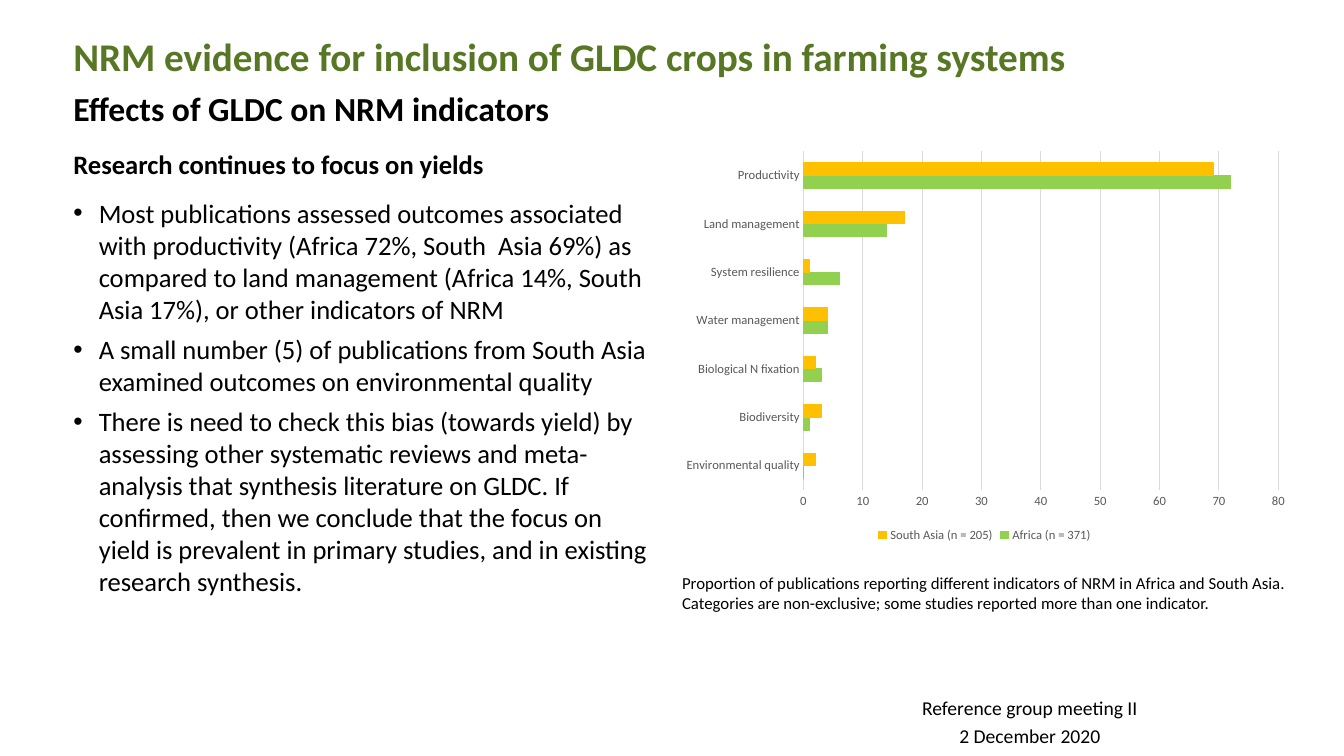
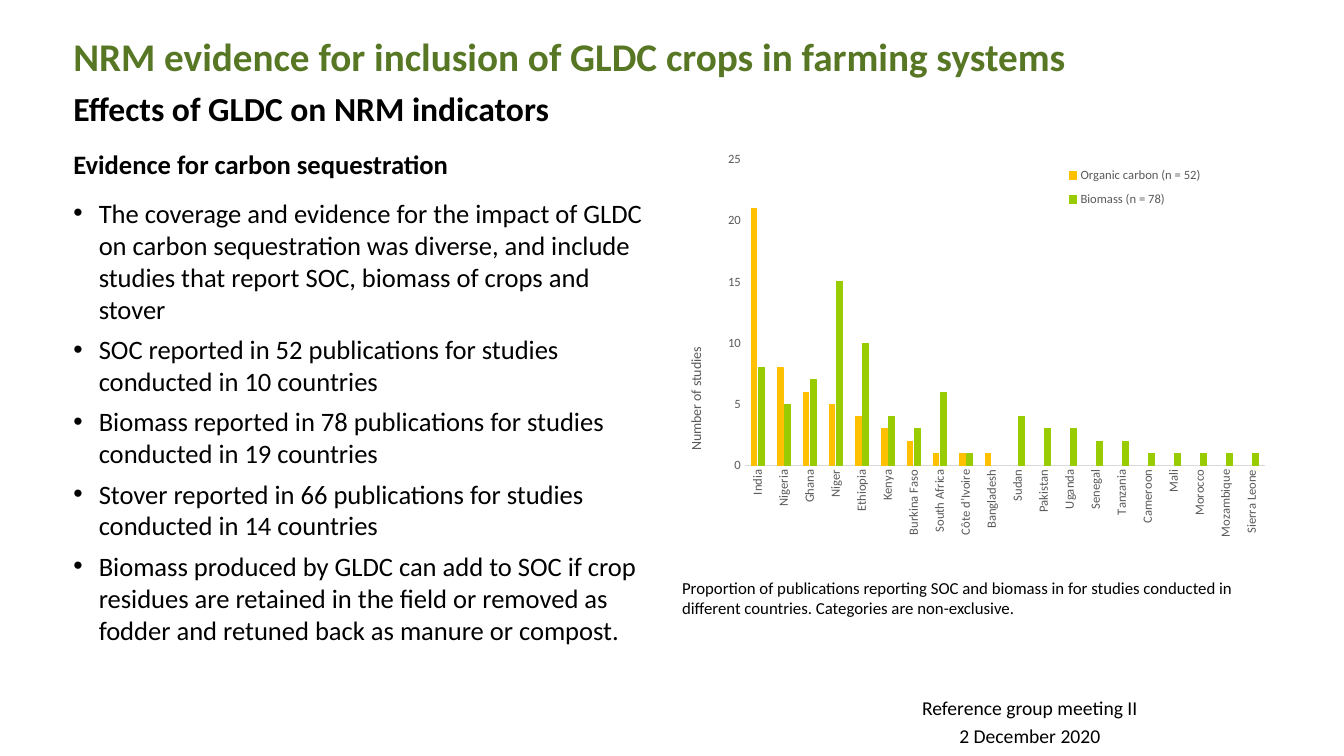
import pptx
import pptx.util
import pptx.chart.data
import pptx.dml.color
import pptx.enum.chart
import pptx.enum.text
import pptx.oxml
import pptx.oxml.ns

Cm, Pt = pptx.util.Cm, pptx.util.Pt
CHART_TYPE = pptx.enum.chart.XL_CHART_TYPE
LEGEND = pptx.enum.chart.XL_LEGEND_POSITION
NO_TICK = pptx.enum.chart.XL_TICK_MARK.NONE
ALIGN = pptx.enum.text.PP_ALIGN
ANCHOR = pptx.enum.text.MSO_ANCHOR

COLORS = {"title": "577724", "text": "000000", "label": "595959", "rule": "D9D9D9",
          "amber": "FFC000", "green": "92D050", "lime": "99CC00"}
FONT = "Calibri"
FONTS = {
    "title": {"size": Pt(28), "bold": True, "color": "title"},
    "subtitle": {"size": Pt(24), "bold": True, "color": "text"},
    "heading": {"size": Pt(19), "bold": True, "color": "text"},
    "bullet": {"size": Pt(19), "bold": False, "color": "text"},
    "footer": {"size": Pt(14), "bold": False, "color": "text"},
    "caption": {"size": Pt(12), "bold": False, "color": "text"},
    "chart": {"size": Pt(10), "bold": False, "color": "text"},
    "axis": {"size": Pt(9), "bold": False, "color": "label"},
    "axis title": {"size": Pt(10), "bold": False, "color": "label"},
}
PARAGRAPHS = {
    "title": {"line_spacing": 0.9},
    "subtitle": {"line_spacing": 0.9},
    "heading": {"space_after": Pt(6)},
    "bullet": {"space_before": Pt(6)},
    "footer": {"alignment": ALIGN.CENTER},
    "caption": {},
}

LEFT, RIGHT, TOP = 1.6, 16.94, 3.61
CHART_HEIGHT, CAPTION_WIDTH = 10.16, 15.75
INDENT = Cm(0.64)

TITLE = "NRM evidence for inclusion of GLDC crops in farming systems"
SUBTITLE = "Effects of GLDC on NRM indicators"
FOOTER = ["Reference group meeting II", "2 December 2020"]

SLIDES = [
    {
        "heading": "Research continues to focus on yields",
        "bullets": [
            "Most publications assessed outcomes associated with productivity (Africa 72%, South  Asia 69%) as compared to land management (Africa 14%, South Asia 17%), or other indicators of NRM",
            "A small number (5) of publications from South Asia examined outcomes on environmental quality",
            "There is need to check this bias (towards yield) by assessing other systematic reviews and meta-analysis that synthesis literature on GLDC. If confirmed, then we conclude that the focus on yield is prevalent in primary studies, and in existing research synthesis.",
        ],
        "caption": "Proportion of publications reporting different indicators of NRM in Africa and South Asia. Categories are non-exclusive; some studies reported more than one indicator.",
        "caption_top": 14.3,
        "chart": {
            "type": CHART_TYPE.BAR_CLUSTERED,
            "width": 15.75,
            "categories": ["Environmental quality", "Biodiversity", "Biological N fixation",
                           "Water management", "System resilience", "Land management",
                           "Productivity"],
            "series": [
                ("Africa (n = 371)", [0, 1, 3, 4, 6, 14, 72], "green"),
                ("South Asia (n = 205)", [2, 3, 2, 4, 1, 17, 69], "amber"),
            ],
            "plot": {"gap_width": 182, "overlap": 0},
            "scale": {"minimum_scale": 0, "maximum_scale": 80, "major_unit": 10},
            "gridlines": True,
            "legend": {"position": LEGEND.BOTTOM, "include_in_layout": False},
            "layouts": {"c:plotArea": {"x": 0.21, "y": 0.02, "w": 0.76, "h": 0.84}},
        },
    },
    {
        "heading": "Evidence for carbon sequestration",
        "bullets": [
            "The coverage and evidence for the impact of GLDC on carbon sequestration was diverse, and include studies that report SOC, biomass of crops and stover",
            "SOC reported in 52 publications for studies conducted in 10 countries",
            "Biomass reported in 78 publications for studies conducted in 19 countries",
            "Stover reported in 66 publications for studies conducted in 14 countries",
            "Biomass produced by GLDC can add to SOC if crop residues are retained in the field or removed as fodder and retuned back as manure or compost.",
        ],
        "caption": "Proportion of publications reporting SOC and biomass in for studies conducted in different countries. Categories are non-exclusive.",
        "caption_top": 14.43,
        "chart": {
            "type": CHART_TYPE.COLUMN_CLUSTERED,
            "width": 15.24,
            "categories": ["India", "Nigeria", "Ghana", "Niger", "Ethiopia", "Kenya",
                           "Burkina Faso", "South Africa", "Côte d’Ivoire", "Bangladesh",
                           "Sudan", "Pakistan", "Uganda", "Senegal", "Tanzania", "Cameroon",
                           "Mali", "Morocco", "Mozambique", "Sierra Leone"],
            "series": [
                ("Organic carbon (n = 52)", [21, 8, 6, 5, 4, 3, 2, 1, 1, 1] + [None] * 10, "amber"),
                ("Biomass (n = 78)", [8, 5, 7, 15, 10, 4, 3, 6, 1, None,
                                      4, 3, 3, 2, 2, 1, 1, 1, 1, 1], "lime"),
            ],
            "plot": {"gap_width": 219, "overlap": -27},
            "scale": {"minimum_scale": 0, "maximum_scale": 25, "major_unit": 5},
            "gridlines": False,
            "value_title": "Number of studies",
            "legend": {"position": LEGEND.CORNER, "include_in_layout": True},
            "layouts": {
                "c:plotArea": {"x": 0.12, "y": 0.04, "w": 0.86, "h": 0.76},
                "c:legend": {"x": 0.64, "y": 0.04, "w": 0.25, "h": 0.14},
                "c:valAx/c:title": {"x": 0.02, "y": 0.5},
            },
            "upright": ["c:catAx/c:txPr", "c:valAx/c:title"],
        },
    },
]


def rgb(color):
    return pptx.dml.color.RGBColor.from_string(COLORS[color])


def assign(target, values):
    for name, value in values.items():
        setattr(target, name, value)


def set_font(font, role):
    values = dict(FONTS[role], name=FONT)
    font.color.rgb = rgb(values.pop("color"))
    assign(font, values)


def set_line(line, color):
    line.color.rgb = rgb(color)
    line.width = Pt(0.75)


def add_bullet(paragraph):
    properties = paragraph._p.get_or_add_pPr()
    properties.set("marL", str(int(INDENT)))
    properties.set("indent", str(-int(INDENT)))
    declared = pptx.oxml.ns.nsdecls("a")
    for mark in (f'<a:buFont {declared} typeface="Arial"/>', f'<a:buChar {declared} char="•"/>'):
        properties.append(pptx.oxml.parse_xml(mark))


def add_text(slide, lines, left, top, width, height, anchor=ANCHOR.TOP):
    frame = slide.shapes.add_textbox(Cm(left), Cm(top), Cm(width), Cm(height)).text_frame
    assign(frame, {"word_wrap": True, "vertical_anchor": anchor})
    for index, (role, text) in enumerate(lines):
        paragraph = frame.add_paragraph() if index else frame.paragraphs[0]
        if role == "bullet":
            add_bullet(paragraph)
        assign(paragraph, PARAGRAPHS[role])
        if role == "footer" and index:
            paragraph.space_before = Pt(2.8)
        run = paragraph.add_run()
        run.text = text
        set_font(run.font, role)


def place_part(part, fractions):
    for layout in part.findall(pptx.oxml.ns.qn("c:layout")):
        part.remove(layout)
    modes = "".join(f'<c:{axis}Mode val="edge"/>' for axis in "xy")
    sizes = "".join(f'<c:{key} val="{value}"/>' for key, value in fractions.items())
    target = '<c:layoutTarget val="inner"/>' if part.tag.endswith("plotArea") else ""
    layout = pptx.oxml.parse_xml(
        f'<c:layout {pptx.oxml.ns.nsdecls("c")}><c:manualLayout>'
        f'{target}{modes}{sizes}</c:manualLayout></c:layout>')
    overlay = part.find(pptx.oxml.ns.qn("c:overlay"))
    if overlay is None:
        part.insert(0, layout)
    else:
        overlay.addprevious(layout)


def add_chart(slide, content):
    data = pptx.chart.data.CategoryChartData(number_format="0")
    data.categories = content["categories"]
    for name, values, _ in content["series"]:
        data.add_series(name, values)
    chart = slide.shapes.add_chart(content["type"], Cm(RIGHT), Cm(TOP), Cm(content["width"]),
                                   Cm(CHART_HEIGHT), data).chart
    assign(chart, {"has_title": False, "has_legend": True})
    set_font(chart.font, "chart")
    assign(chart.legend, content["legend"])
    set_font(chart.legend.font, "axis")

    plot = chart.plots[0]
    assign(plot, dict(content["plot"], vary_by_categories=False))
    for series, (_, _, color) in zip(plot.series, content["series"]):
        series.invert_if_negative = False
        series.format.fill.solid()
        series.format.fill.fore_color.rgb = rgb(color)
        set_line(series.format.line, color)

    categories, values = chart.category_axis, chart.value_axis
    for axis in (categories, values):
        assign(axis, {"major_tick_mark": NO_TICK, "minor_tick_mark": NO_TICK})
        set_font(axis.tick_labels.font, "axis")
    set_line(categories.format.line, "rule")
    values.format.line.fill.background()
    assign(values, dict(content["scale"], has_major_gridlines=content["gridlines"]))
    assign(values.tick_labels, {"number_format": "0", "number_format_is_linked": False})
    if content["gridlines"]:
        set_line(values.major_gridlines.format.line, "rule")
    if "value_title" in content:
        run = values.axis_title.text_frame.paragraphs[0].add_run()
        run.text = content["value_title"]
        set_font(run.font, "axis title")

    for place, fractions in content["layouts"].items():
        place_part(chart.element.xpath(f".//{place}")[0], fractions)
    for place in content.get("upright", []):
        for body in chart.element.xpath(f".//{place}//a:bodyPr"):
            body.set("rot", "-5400000")
            body.set("vert", "horz")


def add_shared_text(slide):
    add_text(slide, [("title", TITLE)], LEFT, 0.79, 26.04, 1.37, ANCHOR.MIDDLE)
    add_text(slide, [("subtitle", SUBTITLE)], LEFT, 2.21, 19.53, 1.17)
    add_text(slide, [("footer", line) for line in FOOTER], 22.78, 17.42, 6.35, 1.57)


def main():
    deck = pptx.Presentation()
    assign(deck, {"slide_width": Cm(33.87), "slide_height": Cm(19.05)})
    for content in SLIDES:
        slide = deck.slides.add_slide(deck.slide_layouts[6])
        add_shared_text(slide)
        findings = [("heading", content["heading"])]
        findings += [("bullet", text) for text in content["bullets"]]
        add_text(slide, findings, LEFT, TOP, 15.24, 12)
        add_chart(slide, content["chart"])
        add_text(slide, [("caption", content["caption"])], RIGHT, content["caption_top"],
                 CAPTION_WIDTH, 1.27)
    deck.save("out.pptx")


if __name__ == "__main__":
    main()
